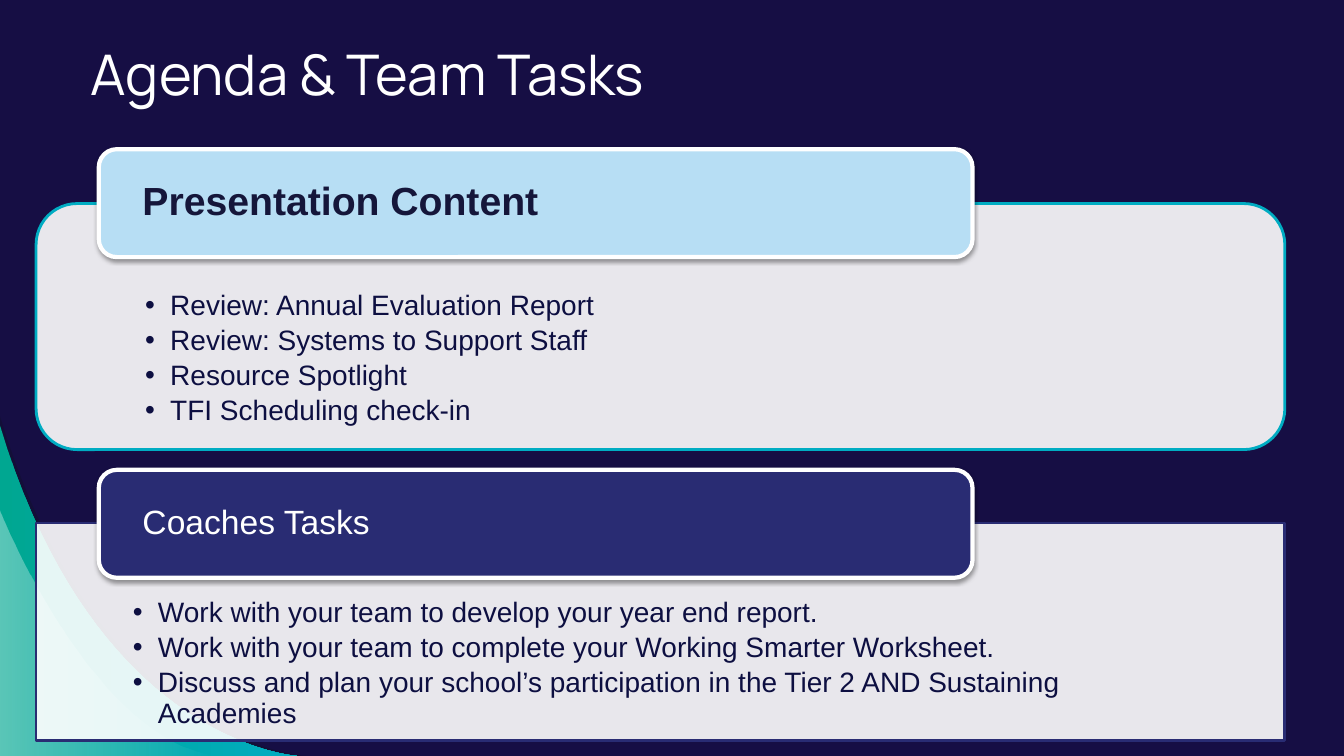
from pptx import Presentation
from pptx.dml.color import RGBColor
from pptx.enum.shapes import MSO_SHAPE as SHAPE
from pptx.enum.text import MSO_ANCHOR as ANCHOR, MSO_AUTO_SIZE as AUTO_SIZE, PP_ALIGN as ALIGN
from pptx.oxml import parse_xml
from pptx.oxml.ns import nsdecls, qn
from pptx.util import Cm, Pt

NIGHT = RGBColor(0x16, 0x0E, 0x44)
SHADE = RGBColor(0x12, 0x10, 0x2F)
CYAN = RGBColor(0x00, 0xAC, 0xC2)
GREEN = RGBColor(0x00, 0xA7, 0x91)
WHITE = RGBColor(0xFF, 0xFF, 0xFF)
SKY = RGBColor(0xB7, 0xDE, 0xF4)
INDIGO = RGBColor(0x29, 0x2C, 0x73)
INK = RGBColor(0x15, 0x16, 0x3A)
NAVY = RGBColor(0x0D, 0x0F, 0x41)

WIDTH, HEIGHT = 33.87, 19.05
PANEL_LEFT, PANEL_WIDTH = 0.91, 31.47
TAB_LEFT, TAB_WIDTH, TAB_HEIGHT = 2.49, 22.02, 2.72
STEPS = 40


def box(left, top, width, height):
    """Turn centimetres into lengths."""
    return Cm(left), Cm(top), Cm(width), Cm(height)


def write(frame, *lines, font="Arial", size=20, color=NAVY, bold=False,
          insets=(0.25, 0.25, 0.25, 0.25), anchor=ANCHOR.TOP,
          spacing=0.9, after=0, bullet=False):
    """Fill a text frame with one paragraph per line."""
    frame.word_wrap = True
    frame.auto_size = AUTO_SIZE.NONE
    frame.vertical_anchor = anchor
    (frame.margin_left, frame.margin_top,
     frame.margin_right, frame.margin_bottom) = box(*insets)
    for index, line in enumerate(lines):
        paragraph = frame.add_paragraph() if index else frame.paragraphs[0]
        paragraph.alignment = ALIGN.LEFT
        paragraph.line_spacing = spacing
        paragraph.space_before = Pt(0)
        paragraph.space_after = Pt(after)
        run = paragraph.add_run()
        run.text = line
        run.font.name = font
        run.font.size = Pt(size)
        run.font.bold = bold
        run.font.color.rgb = color
        if bullet:
            properties = paragraph._p.get_or_add_pPr()
            properties.set("marL", str(Cm(0.63)))
            properties.set("indent", str(-Cm(0.63)))
            properties.append(parse_xml(f'<a:buChar {nsdecls("a")} char="•"/>'))


def set_opacity(shape, *percents):
    """Give each fill colour of a shape its opacity."""
    for color, percent in zip(shape._element.spPr.iter(qn("a:srgbClr")), percents):
        color.append(parse_xml(f'<a:alpha {nsdecls("a")} val="{percent * 1000}"/>'))


class AgendaSlide:
    """Draw the parts of an agenda on one slide."""

    def __init__(self, deck):
        """Add a slide with a title and two lists."""
        self.slide = deck.slides.add_slide(deck.slide_layouts[3])
        self.shapes = self.slide.shapes
        self.slide.background.fill.solid()
        self.slide.background.fill.fore_color.rgb = NIGHT

    def sweep(self, start, bend, pull, end, colors, opacities):
        """Fill the bottom left corner below a curve."""
        curve = []
        for step in range(STEPS + 1):
            t = step / STEPS
            weights = ((1 - t) ** 3, 3 * t * (1 - t) ** 2, 3 * t * t * (1 - t), t ** 3)
            curve.append(tuple(
                Cm(sum(w * point[axis] for w, point in zip(weights, (start, bend, pull, end))))
                for axis in (0, 1)))
        builder = self.shapes.build_freeform(*curve[0])
        builder.add_line_segments(curve[1:] + [(Cm(0), Cm(HEIGHT))], close=True)
        corner = builder.convert_to_shape()
        corner.shadow.inherit = False
        corner.line.fill.background()
        if len(colors) == 1:
            corner.fill.solid()
            corner.fill.fore_color.rgb = colors[0]
        else:
            corner.fill.gradient()
            corner.fill.gradient_angle = 0
            for stop, color, position in zip(corner.fill.gradient_stops, colors, (0, 1)):
                stop.color.rgb = color
                stop.position = position
        set_opacity(corner, *opacities)

    def block(self, kind, place, fill, line, width):
        """Add an outlined shape."""
        shape = self.shapes.add_shape(kind, *box(*place))
        shape.shadow.inherit = False
        shape.fill.solid()
        shape.fill.fore_color.rgb = fill
        shape.line.color.rgb = line
        shape.line.width = Pt(width)
        return shape

    def panel(self, kind, top, height, line):
        """Add the pale panel behind a list."""
        place = (PANEL_LEFT, top, PANEL_WIDTH, height)
        set_opacity(self.block(kind, place, WHITE, line, 2), 90)

    def tab(self, heading, top, fill, **style):
        """Add a raised heading over a panel."""
        tab = self.block(SHAPE.ROUNDED_RECTANGLE,
                         (TAB_LEFT, top, TAB_WIDTH, TAB_HEIGHT), fill, WHITE, 3)
        tab._element.spPr.find(qn("a:effectLst")).append(parse_xml(
            f'<a:outerShdw {nsdecls("a")} blurRad="{Pt(3.1)}" dist="{Pt(1.6)}" '
            'dir="5400000" rotWithShape="0"><a:srgbClr val="000000">'
            '<a:alpha val="38000"/></a:srgbClr></a:outerShdw>'))
        write(tab.text_frame, heading, insets=(0.97, 0, 0.97, 0),
              anchor=ANCHOR.MIDDLE, **style)

    def placeholder(self, index, place, *lines, **style):
        """Move a placeholder to the front and fill it."""
        holder = self.slide.placeholders[index]
        holder.left, holder.top, holder.width, holder.height = box(*place)
        self.shapes._spTree.append(holder._element)
        write(holder.text_frame, *lines, **style)

    def tasks(self, index, place, *lines):
        """Add a bulleted list."""
        self.placeholder(index, place, *lines, insets=(2.44, 1.9, 2.44, 0.41),
                         after=3.5, bullet=True)


def main():
    """Build the agenda and save it."""
    deck = Presentation()
    deck.slide_width, deck.slide_height = Cm(WIDTH), Cm(HEIGHT)
    agenda = AgendaSlide(deck)

    agenda.sweep((0, 10.49), (2.49, 18.77), (7.7, HEIGHT), (7.7, HEIGHT), [SHADE], [54])
    agenda.sweep((0, 10.72), (2.41, 18.77), (7.49, HEIGHT), (7.49, HEIGHT),
                 [GREEN, CYAN], [100, 100])
    agenda.sweep((0, 12.85), (0, 12.85), (2.31, 18.67), (5.49, HEIGHT),
                 [WHITE, WHITE], [36, 0])

    agenda.panel(SHAPE.ROUNDED_RECTANGLE, 5.13, 6.2, CYAN)
    agenda.tasks(1, (1.22, 5.44, 30.86, 5.61),
                 "Review: Annual Evaluation Report",
                 "Review: Systems to Support Staff",
                 "Resource Spotlight",
                 "TFI Scheduling check-in")
    agenda.tab("Presentation Content", 3.76, SKY, size=28, color=INK, bold=True)

    agenda.panel(SHAPE.RECTANGLE, 13.18, 5.49, INDIGO)
    agenda.tasks(2, (PANEL_LEFT, 13.18, PANEL_WIDTH, 5.49),
                 "Work with your team to develop your year end report.",
                 "Work with your team to complete your Working Smarter Worksheet.",
                 "Discuss and plan your school’s participation in the Tier 2 AND "
                 "Sustaining Academies")
    agenda.tab("Coaches Tasks", 11.84, INDIGO, size=24, color=WHITE)

    agenda.placeholder(0, (2.03, 0.66, 26.06, 2.34), "Agenda & Team Tasks",
                       font="Manrope", size=40, color=WHITE,
                       anchor=ANCHOR.MIDDLE, spacing=1.0)
    deck.save("out.pptx")


if __name__ == "__main__":
    main()
